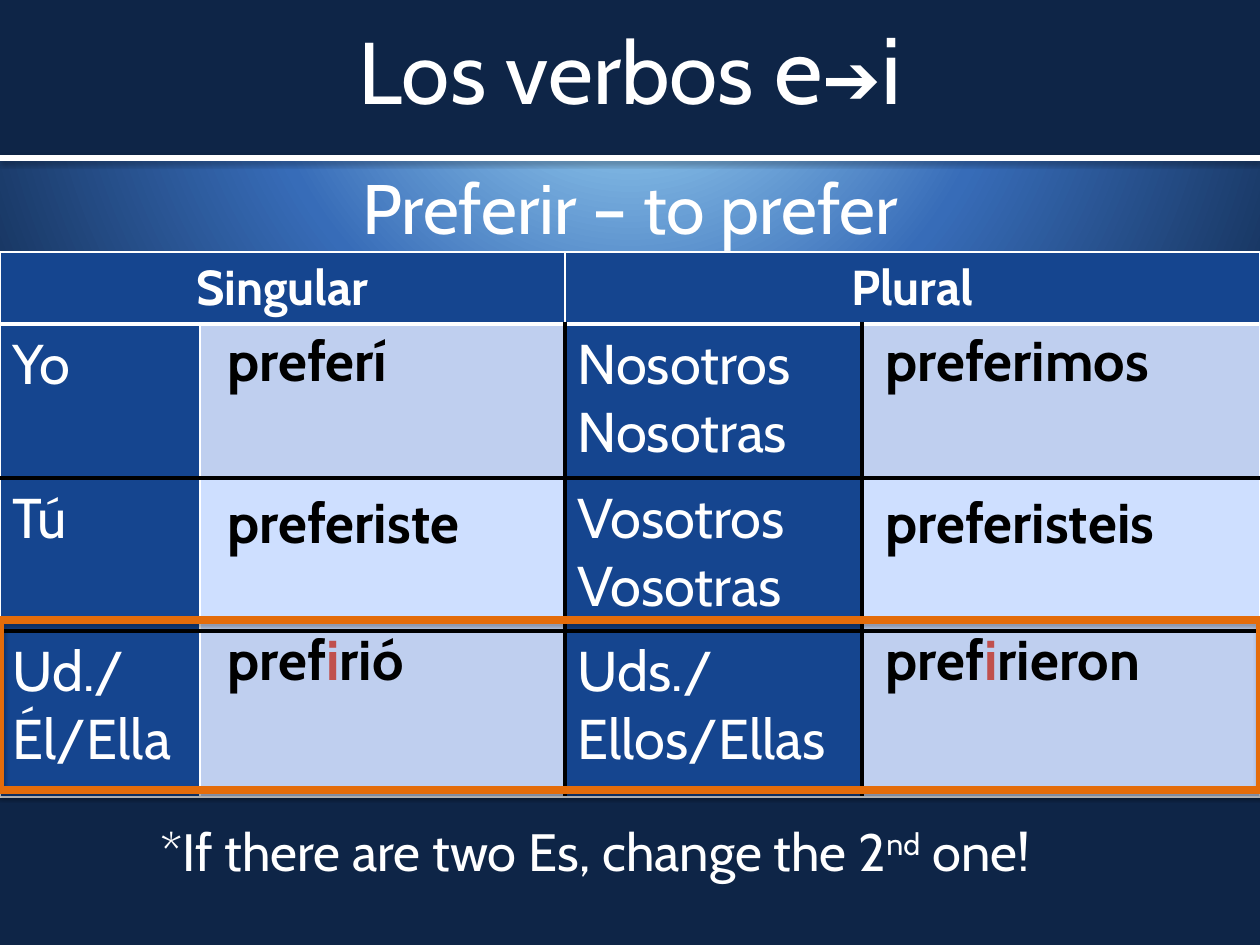
from dataclasses import dataclass

from lxml import etree
from pptx import Presentation
from pptx.dml.color import RGBColor
from pptx.enum.shapes import MSO_CONNECTOR, MSO_SHAPE
from pptx.enum.text import MSO_ANCHOR, MSO_AUTO_SIZE, PP_ALIGN
from pptx.oxml import parse_xml
from pptx.oxml.ns import nsdecls, qn
from pptx.util import Pt

SCALE = 914400 // 126
PAGE_WIDTH, PAGE_HEIGHT = 1260, 945
FONT = "Cabin"
CENTER = PP_ALIGN.CENTER
LEFT = PP_ALIGN.LEFT

NAVY = RGBColor(0x0E, 0x25, 0x47)
BLUE = RGBColor(0x15, 0x45, 0x8F)
PALE = RGBColor(0xBF, 0xCF, 0xEF)
PALER = RGBColor(0xCE, 0xDF, 0xFF)
WHITE = RGBColor(0xFF, 0xFF, 0xFF)
BLACK = RGBColor(0, 0, 0)
RED = RGBColor(0xC0, 0x50, 0x4D)
ORANGE = RGBColor(0xE4, 0x6C, 0x0A)

PLAIN_TABLE = "{2D5ABB26-0587-4C30-8999-92F81FD0307C}"
THIN, THICK = (WHITE, 1), (BLACK, 3)
BACKGROUND_STOPS = ((0, "B1E9FF"), (48, "376CB8"), (100, "0E2547"))


@dataclass(frozen=True)
class Span:
    text: str
    size: int | None = None
    font: str | None = None
    color: RGBColor | None = None
    baseline: int = 0


@dataclass(frozen=True)
class VerbForm:
    left: int
    top: int
    width: int
    height: int
    spans: tuple[Span, ...]


COLUMNS = (200, 365, 297, 398)
ROWS = (71, 154, 153, 166)
PRONOUNS = (
    ("Yo", "Nosotros\nNosotras"),
    ("Tú", "Vosotros\nVosotras"),
    ("Ud./Él/Ella", "Uds./Ellos/Ellas"),
)
CHANGED = Span("i", color=RED)
SINGULAR_LEFT, PLURAL_LEFT = 215, 873
VERB_FORMS = (
    VerbForm(SINGULAR_LEFT, 321, 310, 79, (Span("preferí"),)),
    VerbForm(SINGULAR_LEFT, 483, 295, 79, (Span("preferiste"),)),
    VerbForm(SINGULAR_LEFT, 620, 310, 84, (Span("pref"), CHANGED, Span("rió"))),
    VerbForm(PLURAL_LEFT, 321, 355, 86, (Span("preferimos"),)),
    VerbForm(PLURAL_LEFT, 483, 318, 79, (Span("preferisteis"),)),
    VerbForm(PLURAL_LEFT, 620, 302, 79, (Span("pref"), CHANGED, Span("rieron"))),
)


def px(*lengths: int) -> list[int]:
    return [length * SCALE for length in lengths]


def set_background(page) -> None:
    stops = "".join(
        f'<a:gs pos="{place * 1000}"><a:srgbClr val="{color}"/></a:gs>'
        for place, color in BACKGROUND_STOPS
    )
    page._element.cSld.insert(0, parse_xml(
        f'<p:bg {nsdecls("p", "a")}><p:bgPr><a:gradFill rotWithShape="1">'
        f'<a:gsLst>{stops}</a:gsLst><a:path path="circle">'
        '<a:fillToRect l="50000" t="-80000" r="50000" b="180000"/></a:path>'
        '</a:gradFill><a:effectLst/></p:bgPr></p:bg>'
    ))


def add_shadow(shape, opacity: int, distance: float) -> None:
    shape._element.spPr.append(parse_xml(
        f'<a:effectLst {nsdecls("a")}><a:outerShdw blurRad="{Pt(3.1)}" '
        f'dist="{Pt(distance)}" dir="5400000" rotWithShape="0">'
        f'<a:srgbClr val="000000"><a:alpha val="{opacity * 1000}"/></a:srgbClr>'
        '</a:outerShdw></a:effectLst>'
    ))


def style_paragraph(para, size: int, color: RGBColor, bold=False, align=LEFT) -> None:
    para.alignment = align
    font = para.font
    font.name, font.size, font.bold = FONT, Pt(size), bold
    font.color.rgb = color


def write_spans(para, spans: tuple[Span, ...], color: RGBColor, size: int,
                bold=False, align=LEFT) -> None:
    style_paragraph(para, size, color, bold, align)
    for span in spans:
        run = para.add_run()
        run.text = span.text
        font = run.font
        font.name, font.size, font.bold = span.font or FONT, Pt(span.size or size), bold
        font.color.rgb = span.color or color
        if span.baseline:
            font._element.set("baseline", str(span.baseline * 1000))


def add_plain_table(page, left: int, top: int, columns: tuple[int, ...],
                    rows: tuple[int, ...]):
    frame = page.shapes.add_table(len(rows), len(columns),
                                  *px(left, top, sum(columns), sum(rows)))
    table = frame.table
    table.first_row = table.horz_banding = False
    table._tbl.tblPr.find(qn("a:tableStyleId")).text = PLAIN_TABLE
    for column, width in zip(table.columns, columns):
        column.width = width * SCALE
    for row, height in zip(table.rows, rows):
        row.height = height * SCALE
    return table


def style_cell(cell, fill: RGBColor, **borders: tuple[RGBColor, int]) -> None:
    """Fill a cell and draw its borders; sides left out are thin and white."""
    cell.fill.solid()
    cell.fill.fore_color.rgb = fill
    properties = cell._tc.get_or_add_tcPr()
    for place, side in enumerate("LRTB"):
        color, width = borders.get(side, THIN)
        line = etree.Element(qn(f"a:ln{side}"), w=str(Pt(width)))
        solid = etree.SubElement(line, qn("a:solidFill"))
        etree.SubElement(solid, qn("a:srgbClr"), val=str(color))
        properties.insert(place, line)


def write_cell(cell, text: str, size: int, bold=False, align=LEFT) -> None:
    cell.text = text
    for para in cell.text_frame.paragraphs:
        style_paragraph(para, size, WHITE, bold, align)
        for run in para.runs:
            run.font.name, run.font.bold = FONT, bold


def add_pronoun_table(page) -> None:
    table = add_plain_table(page, 0, 252, COLUMNS, ROWS)
    for column, heading in ((0, "Singular"), (2, "Plural")):
        for cell in (table.cell(0, column), table.cell(0, column + 1)):
            style_cell(cell, BLUE, B=(WHITE, 3))
        table.cell(0, column).merge(table.cell(0, column + 1))
        write_cell(table.cell(0, column), heading, 28, True, CENTER)
    last = len(PRONOUNS)
    for row, pronouns in enumerate(PRONOUNS, 1):
        for column in range(len(COLUMNS)):
            cell = table.cell(row, column)
            is_form = column % 2
            form_fill = PALE if row % 2 else PALER
            style_cell(cell, form_fill if is_form else BLUE,
                       L=THICK if column >= 2 else THIN,
                       R=THICK if column in (1, 2) else THIN,
                       T=THICK if row > 1 else (WHITE, 3),
                       B=THICK if row < last else THIN)
            if not is_form:
                write_cell(cell, pronouns[column // 2], 32)


def fill_placeholder(box, bounds: tuple[int, ...], spans: tuple[Span, ...],
                     size: int, anchor) -> None:
    box.left, box.top, box.width, box.height = px(*bounds)
    frame = box.text_frame
    frame.auto_size = MSO_AUTO_SIZE.NONE
    frame.vertical_anchor = anchor
    write_spans(frame.paragraphs[0], spans, WHITE, size, align=CENTER)


def main() -> None:
    deck = Presentation()
    deck.slide_width, deck.slide_height = px(PAGE_WIDTH, PAGE_HEIGHT)
    page = deck.slides.add_slide(deck.slide_layouts[0])
    set_background(page)
    title, subtitle = page.placeholders

    title_band = page.shapes.add_shape(MSO_SHAPE.RECTANGLE, *px(0, 0, PAGE_WIDTH, 158))
    title_band.shadow.inherit = False
    title_band.fill.solid()
    title_band.fill.fore_color.rgb = NAVY
    title_band.line.fill.background()
    title._element.addprevious(title_band._element)

    fill_placeholder(title, (0, 0, PAGE_WIDTH, 134),
                     (Span("Los verbos "), Span("e", 54), Span("➔", 40, "Arial"),
                      Span("i", 54)), 50, MSO_ANCHOR.MIDDLE)
    fill_placeholder(subtitle, (0, 158, PAGE_WIDTH, 655),
                     (Span("Preferir – to prefer"),), 40, MSO_ANCHOR.TOP)

    divider = page.shapes.add_connector(MSO_CONNECTOR.STRAIGHT, *px(0, 158, PAGE_WIDTH, 158))
    divider.line.color.rgb = WHITE
    divider.line.width = Pt(3)
    add_shadow(divider, 38, 1.6)

    add_pronoun_table(page)
    for form in VERB_FORMS:
        table = add_plain_table(page, form.left, form.top, (form.width,), (form.height,))
        write_spans(table.cell(0, 0).text_frame.paragraphs[0], form.spans, BLACK, 32, True)

    highlight = page.shapes.add_shape(MSO_SHAPE.RECTANGLE, *px(0, 620, PAGE_WIDTH, 170))
    highlight.fill.background()
    highlight.line.color.rgb = ORANGE
    highlight.line.width = Pt(5)
    add_shadow(highlight, 35, 1.8)

    note = page.shapes.add_textbox(*px(113, 813, 964, 77))
    note.text_frame.word_wrap = True
    note.text_frame.auto_size = MSO_AUTO_SIZE.SHAPE_TO_FIT_TEXT
    write_spans(note.text_frame.paragraphs[0],
                (Span("*If there are two Es, change the 2"), Span("nd", baseline=30),
                 Span(" one!")), WHITE, 30, align=CENTER)
    deck.save("out.pptx")


if __name__ == "__main__":
    main()
